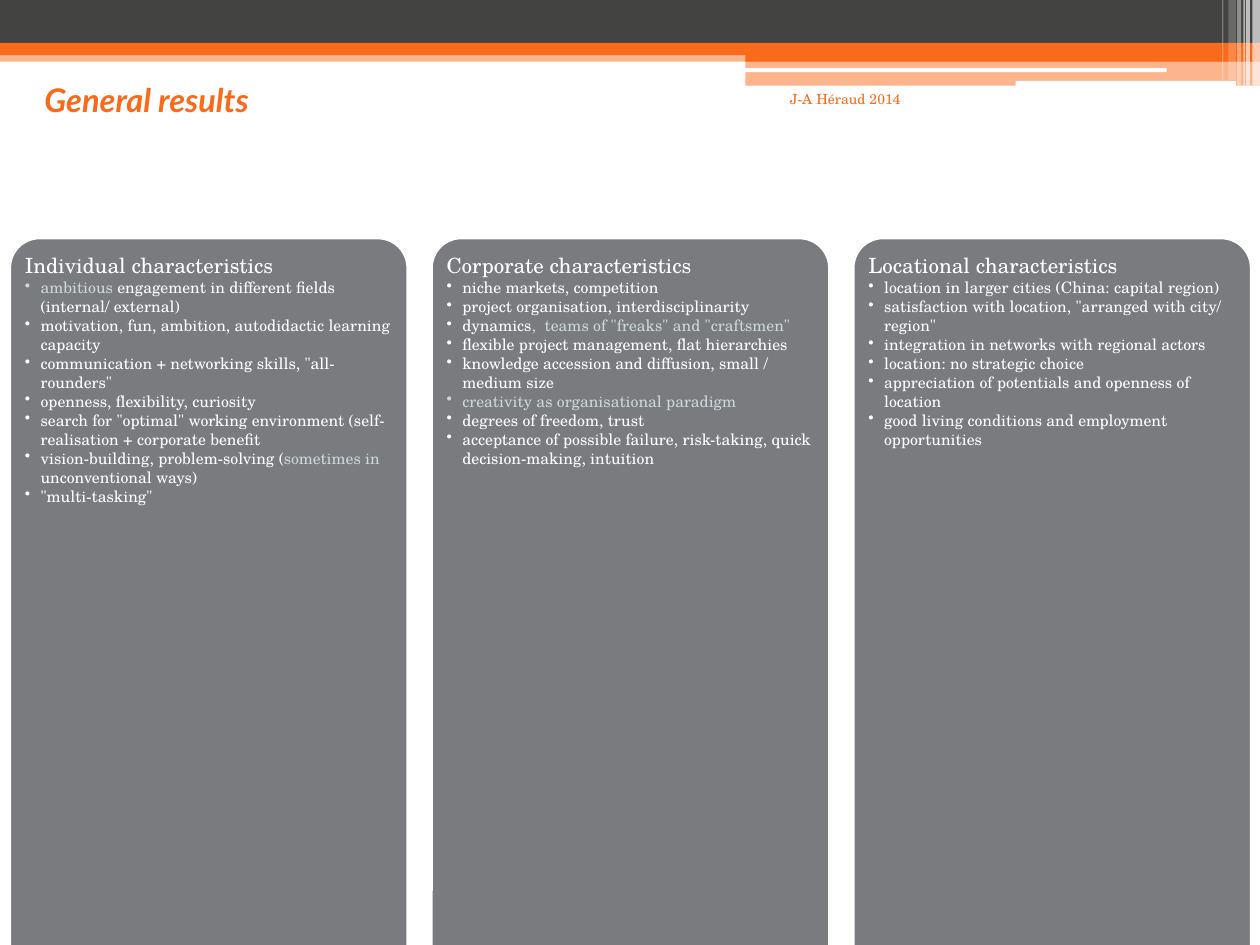
from dataclasses import dataclass

from lxml.etree import SubElement
from pptx import Presentation
from pptx.dml.color import RGBColor
from pptx.enum.shapes import MSO_SHAPE as Shape
from pptx.enum.text import PP_ALIGN as Align
from pptx.oxml.ns import qn
from pptx.util import Pt


@dataclass(frozen=True)
class Theme:
    """Colours, fonts and type sizes of the deck."""
    white: str = "FFFFFF"
    dark: str = "434342"
    orange: str = "F96A1B"
    grey: str = "797B7E"
    pale: str = "CDD7D9"
    body_font: str = "TeX Gyre Schola"
    title_font: str = "Lato"
    title_size: float = 18.6
    heading_size: float = 12
    item_size: float = 9
    credit_size: float = 8


THEME = Theme()

COLUMNS = [
    ("Individual characteristics", [
        "|ambitious |engagement in different fields (internal/ external)",
        "motivation, fun, ambition, autodidactic learning capacity",
        'communication + networking skills, "all-rounders"',
        "openness, flexibility, curiosity",
        'search for "optimal" working environment (self-realisation + corporate benefit',
        "vision-building, problem-solving (|sometimes in |unconventional ways)",
        '"multi-tasking"',
    ]),
    ("Corporate characteristics", [
        "niche markets, competition",
        "project organisation, interdisciplinarity",
        'dynamics|,  teams of "freaks" and "craftsmen"',
        "flexible project management, flat hierarchies",
        "knowledge accession and diffusion, small / medium size",
        "|creativity as organisational paradigm",
        "degrees of freedom, trust",
        "acceptance of possible failure, risk-taking, quick decision-making, intuition",
    ]),
    ("Locational characteristics", [
        "location in larger cities (China: capital region)",
        'satisfaction with location, "arranged with city/ region"',
        "integration in networks with regional actors",
        "location: no strategic choice",
        "appreciation of potentials and openness of location",
        "good living conditions and employment opportunities",
    ]),
]


def add_panel(page, box, color, opacity=100, radius=None, line=None):
    """Draw a filled rectangle, rounded when a radius ratio is given."""
    kind = Shape.RECTANGLE if radius is None else Shape.ROUNDED_RECTANGLE
    panel = page.shapes.add_shape(kind, *map(Pt, box))
    panel.shadow.inherit = False
    if radius is not None:
        panel.adjustments[0] = radius
    panel.fill.solid()
    panel.fill.fore_color.rgb = RGBColor.from_string(color)
    if opacity < 100:
        fill = panel.fill._xPr.find(qn("a:solidFill"))
        SubElement(fill[0], qn("a:alpha"), val=str(opacity * 1000))
    if line:
        panel.line.color.rgb = RGBColor.from_string(line)
        panel.line.width = Pt(1.5)
    else:
        panel.line.fill.background()


def add_frame(page, box, inset=3.6):
    """Add an empty wrapping text box and return its text frame."""
    frame = page.shapes.add_textbox(*map(Pt, box)).text_frame
    frame.word_wrap = True
    frame.margin_left = frame.margin_right = Pt(inset)
    frame.margin_top = frame.margin_bottom = Pt(inset)
    return frame


def write(para, text, size, color=THEME.white, font=THEME.body_font,
          bold=False, italic=False, align=Align.LEFT):
    """Write text into a paragraph; bars switch the accent colour on and off."""
    para.alignment = align
    for index, piece in enumerate(text.split("|")):
        if piece:
            span = para.add_run()
            span.text = piece
            span.font.name, span.font.size = font, Pt(size)
            span.font.bold, span.font.italic = bold, italic
            shade = THEME.pale if index % 2 else color
            span.font.color.rgb = RGBColor.from_string(shade)


def add_bullet(para, color, indent=9):
    """Give a paragraph a hanging round bullet."""
    props = para._p.get_or_add_pPr()
    props.set("marL", str(Pt(indent)))
    props.set("indent", str(-Pt(indent)))
    SubElement(SubElement(props, qn("a:buClr")), qn("a:srgbClr"), val=color)
    SubElement(props, qn("a:buChar"), char="•")


def draw_banner(page, box):
    """Draw the header bands, the step at the right and the fading stripes."""
    left, top, width, height = box
    step = left + 426
    bands = [
        (left, 28.8, width, 6.5, THEME.orange, 50),
        (left, 0, width, 24.5, THEME.dark, 100),
        (left, 24.5, width, 7, THEME.orange, 100),
        (step, 28.1, width - 426, 7.2, THEME.orange, 100),
        (step, 34.6, width - 426, 14.4, THEME.orange, 50),
    ]
    for x, y, band_width, band_height, color, opacity in bands:
        add_panel(page, (x, top + y, band_width, band_height), color, opacity)
    for x, y, bar_width, bar_height in [(425.5, 39, 241.2, 2.2), (580.3, 46.2, 126, 2.8)]:
        add_panel(page, (left + x, top + y, bar_width, bar_height), THEME.white, radius=0.167)
    stripes = [
        (715.7, 4.3, height, 65), (712, 2.2, height, 65), (710.6, 0.8, height, 60),
        (707, 2.2, height, 40), (702, 4.3, height - 3, 20), (698.4, 0.8, height - 3, 30),
    ]
    for x, stripe_width, stripe_height, opacity in stripes:
        add_panel(page, (left + x, top, stripe_width, stripe_height), THEME.white, opacity)


def draw_titles(page, box):
    """Write the slide title at the left and the credit beside it."""
    left, top, width, height = box
    title = add_frame(page, (left, top, 357, height), inset=0)
    write(title.paragraphs[0], "General results", THEME.title_size, THEME.orange,
          THEME.title_font, bold=True, italic=True)
    credit = add_frame(page, (left + width - 104.4, top + 2.7, 104.4, 16.6))
    write(credit.paragraphs[0], "J-A Héraud 2014", THEME.credit_size, THEME.orange,
          align=Align.RIGHT)


def draw_column(page, box, heading, items):
    """Draw one card with a heading and its bulleted list."""
    left, top, width, height = box
    add_panel(page, box, THEME.grey, radius=0.075, line=THEME.white)
    frame = add_frame(page, (left + 5, top + 5, width - 10, 170))
    write(frame.paragraphs[0], heading, THEME.heading_size)
    for item in items:
        para = frame.add_paragraph()
        write(para, item, THEME.item_size)
        add_bullet(para, THEME.pale if item.startswith("|") else THEME.white)


def draw_columns(page, box, gap=13.6):
    """Share the box equally among the cards."""
    left, top, width, height = box
    card = (width - gap * (len(COLUMNS) - 1)) / len(COLUMNS)
    for index, (heading, items) in enumerate(COLUMNS):
        place = (left + index * (card + gap), top, card, height)
        draw_column(page, place, heading, items)


def main():
    """Build the deck and save it."""
    deck = Presentation()
    deck.slide_width, deck.slide_height = Pt(720), Pt(540)
    page = deck.slides.add_slide(deck.slide_layouts[6])
    draw_banner(page, (0, 0, 720, 49))
    draw_titles(page, (25.4, 45.5, 493, 31))
    draw_columns(page, (5.6, 136, 709.4, 478))
    deck.save("out.pptx")


if __name__ == "__main__":
    main()
